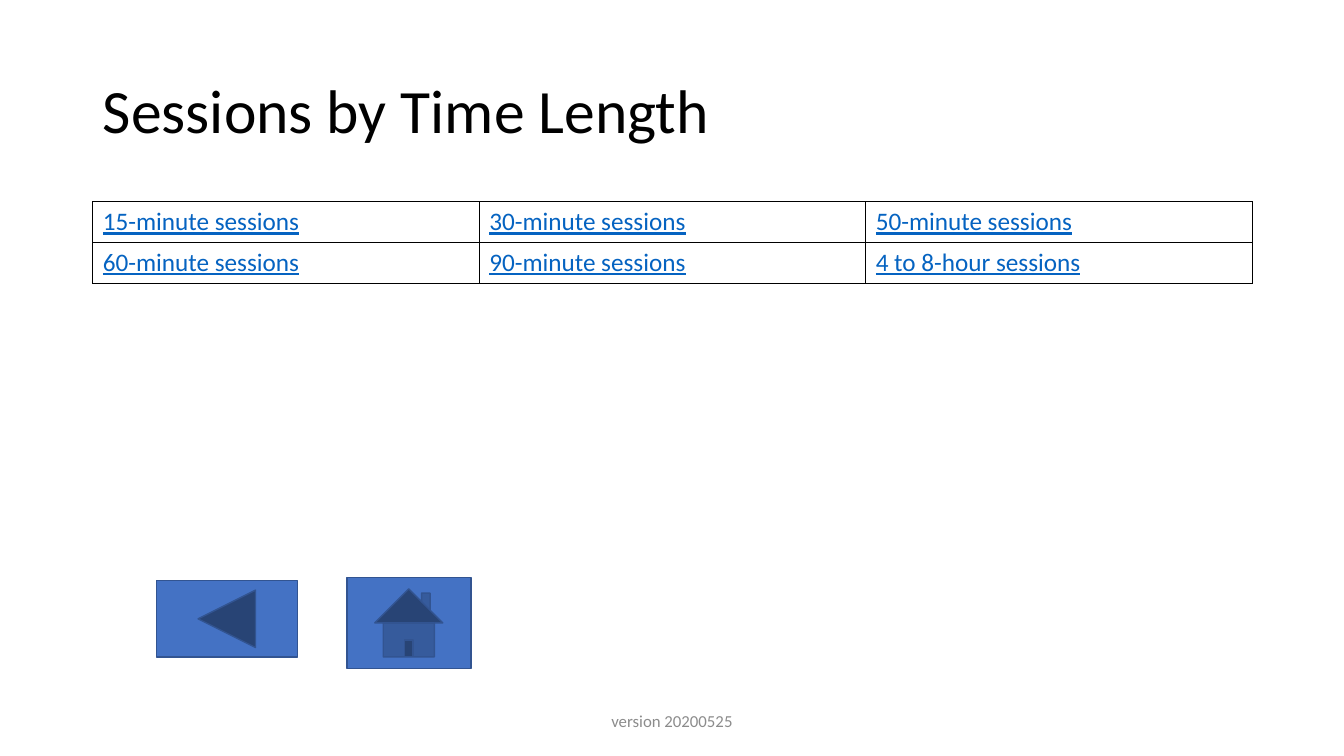
import pptx
import pptx.dml.color
import pptx.enum.shapes
import pptx.enum.text
import pptx.oxml
import pptx.oxml.ns
import pptx.util
from dataclasses import dataclass

Inches = pptx.util.Inches
Pt = pptx.util.Pt
Color = pptx.dml.color.RGBColor.from_string
Align = pptx.enum.text.PP_ALIGN
Anchor = pptx.enum.text.MSO_ANCHOR
Shape = pptx.enum.shapes.MSO_SHAPE


@dataclass
class Theme:
    font: str = "Calibri"
    ink: str = "000000"
    link: str = "0563C1"
    button: str = "4472C4"
    button_line: str = "325491"
    footer: str = "8C8C8C"
    title_size: int = 44
    table_size: int = 18
    footer_size: int = 12
    line_width: int = 1


theme = Theme()


def style_font(para, size, color):
    para.font.name = theme.font
    para.font.size = Pt(size)
    para.font.color.rgb = Color(color)


def add_borders(cell):
    """Draw a solid line on all four sides of a table cell."""
    properties = cell._tc.get_or_add_tcPr()
    for side in ("lnL", "lnR", "lnT", "lnB"):
        properties.append(pptx.oxml.parse_xml(
            f'<a:{side} {pptx.oxml.ns.nsdecls("a")} w="{Pt(theme.line_width)}">'
            f'<a:solidFill><a:srgbClr val="{theme.ink}"/></a:solidFill></a:{side}>'))


deck = pptx.Presentation()
deck.slide_width = Inches(13.33)
deck.slide_height = Inches(7.5)
page = deck.slides.add_slide(deck.slide_layouts.get_by_name("Title Only"))

margin = Inches(0.92)
content_width = Inches(11.5)

# Title
title = page.shapes.title
title.left, title.top = margin, Inches(0.4)
title.width, title.height = content_width, Inches(1.45)
title.text_frame.text = "Sessions by Time Length"
title.text_frame.vertical_anchor = Anchor.MIDDLE
para = title.text_frame.paragraphs[0]
para.alignment = Align.LEFT
para.line_spacing = 0.9
style_font(para, theme.title_size, theme.ink)

# Session table
sessions = [
    ["15-minute sessions", "30-minute sessions", "50-minute sessions"],
    ["60-minute sessions", "90-minute sessions", "4 to 8-hour sessions"],
]
table = page.shapes.add_table(
    len(sessions), len(sessions[0]), margin, Inches(2), content_width, Inches(0.81)).table
table.first_row = False
table.horz_banding = False
for row, labels in enumerate(sessions):
    for column, label in enumerate(labels):
        cell = table.cell(row, column)
        cell.text = label
        para = cell.text_frame.paragraphs[0]
        style_font(para, theme.table_size, theme.link)
        para.font.underline = True
        add_borders(cell)
        cell.fill.background()

# Navigation buttons
buttons = [
    (Shape.ACTION_BUTTON_HOME, 3.44, 5.73, 1.23, 0.9),
    (Shape.ACTION_BUTTON_BACK_OR_PREVIOUS, 1.55, 5.76, 1.4, 0.76),
]
for kind, *frame in buttons:
    button = page.shapes.add_shape(kind, *map(Inches, frame))
    button.shadow.inherit = False
    button.fill.solid()
    button.fill.fore_color.rgb = Color(theme.button)
    button.line.color.rgb = Color(theme.button_line)
    button.line.width = Pt(theme.line_width)

# Version footer
footer_width = Inches(4.5)
box = page.shapes.add_textbox(
    (deck.slide_width - footer_width) // 2, Inches(6.95), footer_width, Inches(0.4))
box.text_frame.word_wrap = True
box.text_frame.vertical_anchor = Anchor.MIDDLE
box.text_frame.text = "version 20200525"
para = box.text_frame.paragraphs[0]
para.alignment = Align.CENTER
style_font(para, theme.footer_size, theme.footer)

deck.save("out.pptx")
